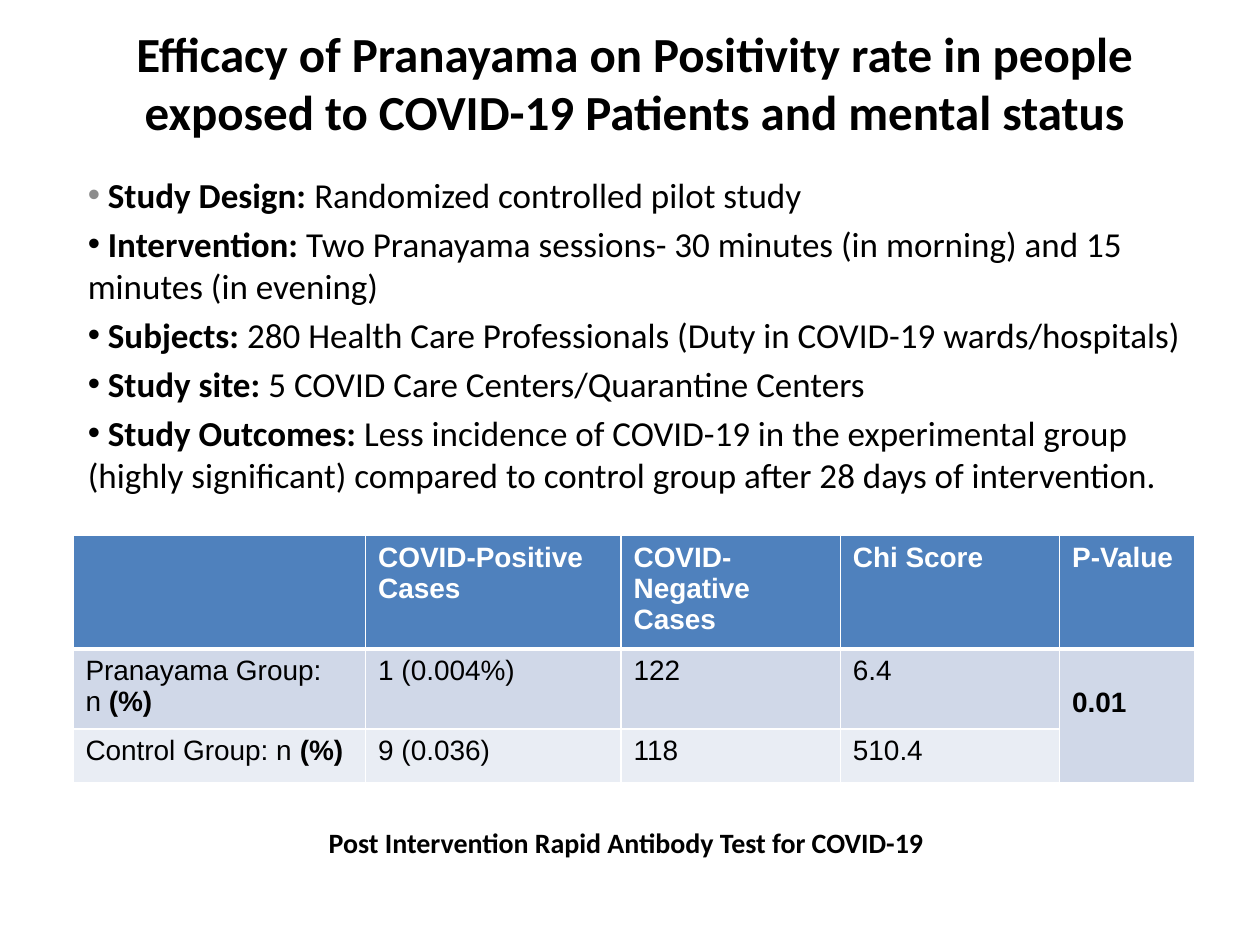
from dataclasses import dataclass

from lxml import etree
from pptx import Presentation
from pptx.dml.color import RGBColor
from pptx.enum.text import MSO_ANCHOR, PP_ALIGN
from pptx.oxml.ns import qn
from pptx.util import Cm, Pt

CENTER = PP_ALIGN.CENTER
LEFT = PP_ALIGN.LEFT
MIDDLE = MSO_ANCHOR.MIDDLE
TITLE_ONLY = 5


@dataclass(frozen=True)
class Theme:
    text_font: str = "Calibri"
    table_font: str = "Arial"
    title_size: int = 28
    body_size: int = 20
    small_size: int = 16
    black: str = "000000"
    white: str = "FFFFFF"
    bullet_gray: str = "8C8C8C"
    header_fill: str = "4F81BD"
    band_fills: tuple = ("D0D8E8", "E9EDF4")
    thin: int = 1
    thick: int = 3


THEME = Theme()

TITLE = ("Efficacy of Pranayama on Positivity rate in people "
         "exposed to COVID-19 Patients and mental status")
STUDY_POINTS = [
    ("Study Design:", "Randomized controlled pilot study"),
    ("Intervention:", "Two Pranayama sessions- 30 minutes (in morning) and "
                      "15 minutes (in evening)"),
    ("Subjects:", "280 Health Care Professionals (Duty in COVID-19 wards/hospitals)"),
    ("Study site:", "5 COVID Care Centers/Quarantine Centers"),
    ("Study Outcomes:", "Less incidence of COVID-19 in the experimental group "
                        "(highly significant) compared to control group after "
                        "28 days of intervention."),
]
CAPTION = "Post Intervention Rapid Antibody Test for COVID-19"

# A cell is a list of paragraphs; "|" starts the bold part of a paragraph.
HEADER = [[], ["|COVID-Positive", "|Cases"], ["|COVID-Negative", "|Cases"],
          ["|Chi Score"], ["|P-Value"]]
RESULTS = [
    [["Pranayama Group:", "n |(%)"], ["1 (0.004%)"], ["122"], ["6.4"], ["|0.01"]],
    [["Control Group: n |(%)"], ["9 (0.036)"], ["118"], ["510.4"], []],
]
COLUMN_WIDTHS = [5.9, 5.15, 4.42, 4.42, 2.72]
ROW_HEIGHTS = [2.13, 1.52, 1.09]


def add_run(paragraph, text, font, size, color=THEME.black, bold=False):
    run = paragraph.add_run()
    run.text = text
    run.font.name = font
    run.font.size = Pt(size)
    run.font.bold = bold
    run.font.color.rgb = RGBColor.from_string(color)


def paragraph_at(text_frame, index):
    """Return the first paragraph for index 0, otherwise a new one."""
    return text_frame.add_paragraph() if index else text_frame.paragraphs[0]


def add_bullet(paragraph, color):
    properties = paragraph._p.get_or_add_pPr()
    properties.set("marL", "0")
    properties.set("indent", "0")
    bullet_color = etree.SubElement(properties, qn("a:buClr"))
    etree.SubElement(bullet_color, qn("a:srgbClr"), val=color)
    etree.SubElement(properties, qn("a:buFont"), typeface="Arial")
    etree.SubElement(properties, qn("a:buChar"), char="•")


def add_text_box(slide, left, top, width, height):
    box = slide.shapes.add_textbox(Cm(left), Cm(top), Cm(width), Cm(height))
    box.text_frame.word_wrap = True
    return box.text_frame


def set_title(slide):
    title = slide.shapes.title
    title.left, title.top = Cm(1.07), Cm(0.4)
    title.width, title.height = Cm(23.44), Cm(2.5)
    text_frame = title.text_frame
    text_frame.word_wrap = True
    text_frame.vertical_anchor = MIDDLE
    paragraph = text_frame.paragraphs[0]
    paragraph.alignment = CENTER
    add_run(paragraph, TITLE, THEME.text_font, THEME.title_size, bold=True)


def add_study_points(slide):
    text_frame = add_text_box(slide, 1.52, 3.38, 23.24, 7)
    for index, (label, description) in enumerate(STUDY_POINTS):
        paragraph = paragraph_at(text_frame, index)
        paragraph.alignment = LEFT
        add_bullet(paragraph, THEME.black if index else THEME.bullet_gray)
        if index:
            paragraph.space_before = Pt(4)
        add_run(paragraph, f" {label} ", THEME.text_font, THEME.body_size, bold=True)
        add_run(paragraph, description, THEME.text_font, THEME.body_size)


def set_borders(cell, top, bottom):
    """Draw white borders; the side borders are always thin."""
    properties = cell._tc.get_or_add_tcPr()
    widths = {"a:lnL": THEME.thin, "a:lnR": THEME.thin, "a:lnT": top, "a:lnB": bottom}
    for tag, width in widths.items():
        line = etree.SubElement(properties, qn(tag), w=str(Pt(width)))
        fill = etree.SubElement(line, qn("a:solidFill"))
        etree.SubElement(fill, qn("a:srgbClr"), val=THEME.white)


def format_cell(cell, lines, fill, color, top, bottom):
    set_borders(cell, top, bottom)
    cell.fill.solid()
    cell.fill.fore_color.rgb = RGBColor.from_string(fill)
    for index, line in enumerate(lines):
        paragraph = paragraph_at(cell.text_frame, index)
        plain, _, strong = line.partition("|")
        for text, bold in ((plain, False), (strong, True)):
            if text:
                add_run(paragraph, text, THEME.table_font, THEME.small_size, color, bold)


def add_results_table(slide):
    rows = [HEADER] + RESULTS
    table = slide.shapes.add_table(
        len(rows), len(HEADER), Cm(1.47), Cm(10.8),
        Cm(sum(COLUMN_WIDTHS)), Cm(sum(ROW_HEIGHTS))).table
    for column, width in zip(table.columns, COLUMN_WIDTHS):
        column.width = Cm(width)
    for row, height in zip(table.rows, ROW_HEIGHTS):
        row.height = Cm(height)

    fills = (THEME.header_fill, *THEME.band_fills)
    for row_index, row in enumerate(rows):
        color = THEME.black if row_index else THEME.white
        top = THEME.thick if row_index == 1 else THEME.thin
        bottom = THEME.thin if row_index else THEME.thick
        for column_index, lines in enumerate(row):
            format_cell(table.cell(row_index, column_index), lines,
                        fills[row_index], color, top, bottom)

    p_value = table.cell(1, len(HEADER) - 1)
    p_value.merge(table.cell(2, len(HEADER) - 1))
    p_value.margin_top = Cm(0.76)


def add_caption(slide):
    paragraph = add_text_box(slide, 5.08, 16.51, 15.09, 0.94).paragraphs[0]
    paragraph.alignment = CENTER
    add_run(paragraph, CAPTION, THEME.text_font, THEME.small_size, bold=True)


def main():
    presentation = Presentation()
    presentation.slide_width, presentation.slide_height = Cm(25.4), Cm(19.05)
    slide = presentation.slides.add_slide(presentation.slide_layouts[TITLE_ONLY])
    set_title(slide)
    add_study_points(slide)
    add_results_table(slide)
    add_caption(slide)
    presentation.save("out.pptx")


if __name__ == "__main__":
    main()
